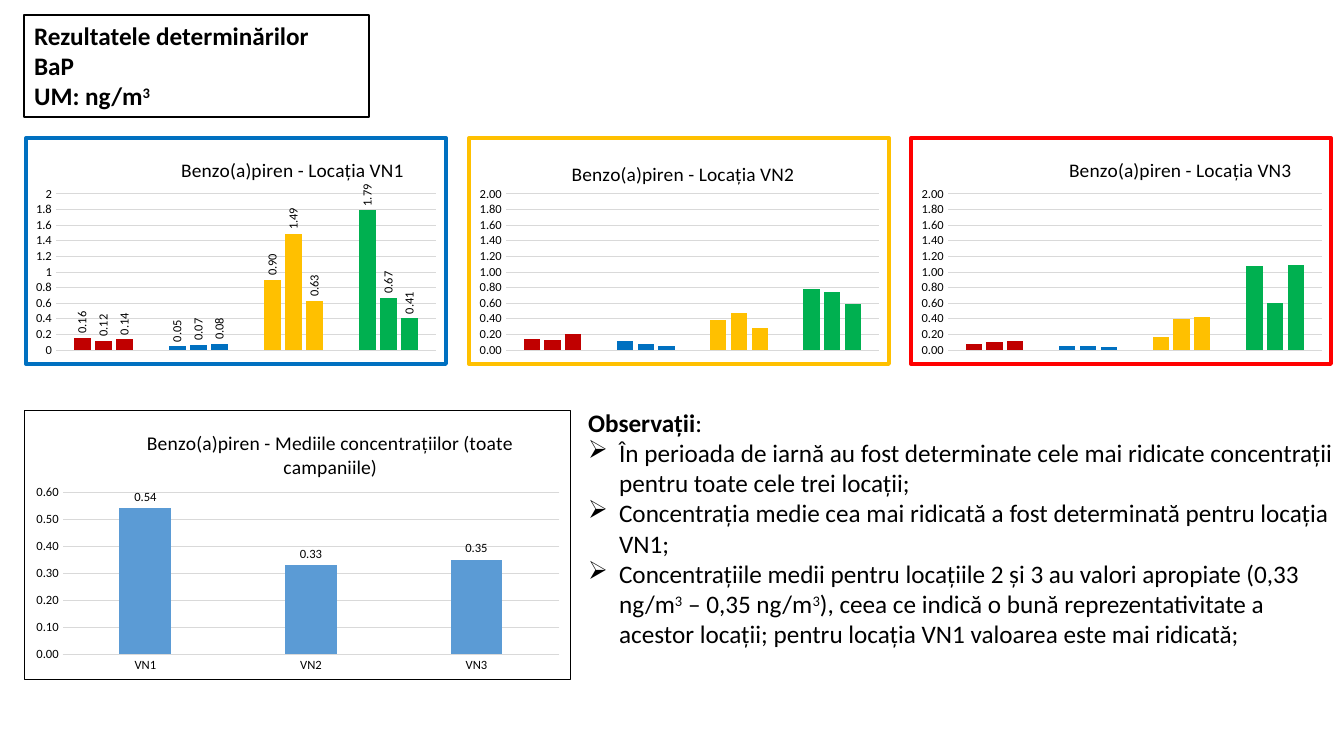
from lxml.etree import SubElement
from pptx import Presentation
from pptx.chart.data import CategoryChartData
from pptx.dml.color import RGBColor
from pptx.enum.chart import XL_CHART_TYPE, XL_LABEL_POSITION, XL_TICK_MARK
from pptx.enum.text import MSO_ANCHOR, MSO_AUTO_SIZE, PP_ALIGN
from pptx.oxml import parse_xml
from pptx.oxml.ns import nsdecls, qn
from pptx.util import Pt

PX = 914400 / 100.8
BLACK = RGBColor(0x00, 0x00, 0x00)
WHITE = RGBColor(0xFF, 0xFF, 0xFF)
GRID = RGBColor(0xD9, 0xD9, 0xD9)
DARK_RED = RGBColor(0xC0, 0x00, 0x00)
RED = RGBColor(0xFF, 0x00, 0x00)
BLUE = RGBColor(0x00, 0x70, 0xC0)
YELLOW = RGBColor(0xFF, 0xC0, 0x00)
GREEN = RGBColor(0x00, 0xB0, 0x50)
LIGHT_BLUE = RGBColor(0x5B, 0x9B, 0xD5)
CAMPAIGN_COLORS = [DARK_RED, BLUE, YELLOW, GREEN]
FONT = "Calibri"


def set_layout(parent, index, fractions, target=""):
    """Place a chart part by hand; fractions are x, y and optionally w, h."""
    for layout in parent.findall(qn("c:layout")):
        parent.remove(layout)
    layout = parse_xml(f"<c:layout {nsdecls('c')}><c:manualLayout/></c:layout>")
    if target:
        SubElement(layout[0], qn("c:layoutTarget")).set("val", target)
    for name in "xy":
        SubElement(layout[0], qn(f"c:{name}Mode")).set("val", "edge")
    for name, value in zip("xywh", fractions):
        SubElement(layout[0], qn(f"c:{name}")).set("val", f"{value:.4f}")
    parent.insert(index, layout)


def set_font(font, size):
    font.name, font.size, font.bold = FONT, Pt(size), False
    font.color.rgb = BLACK


presentation = Presentation()
presentation.slide_width = round(1344 * PX)
presentation.slide_height = round(756 * PX)
slide = presentation.slides.add_slide(presentation.slide_layouts[1])

# Heading and observations: paragraphs of (text, bold, superscript) runs
heading = [
    [("Rezultatele determinărilor", True, False)],
    [("BaP", True, False)],
    [("UM: ng/m", True, False), ("3", True, True)],
]
observations = [
    [("Observații", True, False), (":", False, False)],
    [("În perioada de iarnă au fost determinate cele mai ridicate concentrații "
      "pentru toate cele trei locații;", False, False)],
    [("Concentrația medie cea mai ridicată a fost determinată pentru locația VN1;",
      False, False)],
    [("Concentrațiile medii pentru locațiile 2 și 3 au valori apropiate (0,33 ng/m",
      False, False),
     ("3", False, True), (" – 0,35 ng/m", False, False), ("3", False, True),
     ("), ceea ce indică o bună reprezentativitate a acestor locații; "
      "pentru locația VN1 valoarea este mai ridicată;", False, False)],
]
title, body = slide.shapes.title, slide.placeholders[1]
for shape, frame, paragraphs in [
    (title, (24, 15, 345, 102), heading),
    (body, (578, 402, 766, 254), observations),
]:
    shape.left, shape.top, shape.width, shape.height = [round(v * PX) for v in frame]
    text_frame = shape.text_frame
    text_frame.word_wrap = True
    text_frame.auto_size = MSO_AUTO_SIZE.NONE
    text_frame.vertical_anchor = MSO_ANCHOR.TOP
    for number, runs in enumerate(paragraphs):
        paragraph = text_frame.add_paragraph() if number else text_frame.paragraphs[0]
        paragraph.alignment = PP_ALIGN.LEFT
        paragraph.space_before = Pt(0)
        properties = paragraph._p.get_or_add_pPr()
        bulleted = shape is body and number > 0
        indent = round(31 * PX) if bulleted else 0
        properties.set("marL", str(indent))
        properties.set("indent", str(-indent))
        if bulleted:
            SubElement(properties, qn("a:buFont")).set("typeface", "Wingdings")
            SubElement(properties, qn("a:buChar")).set("char", "Ø")
        else:
            SubElement(properties, qn("a:buNone"))
        set_font(paragraph.font, 18)
        for text, bold, superscript in runs:
            run = paragraph.add_run()
            run.text = text
            run.font.bold = bold
            if superscript:
                run.font._element.set("baseline", "30000")
title.fill.solid()
title.fill.fore_color.rgb = WHITE
title.line.color.rgb = BLACK
title.line.width = Pt(1)

# Frames, plot areas and title corners are in px on the slide
charts = [
    dict(title="Benzo(a)piren - Locația VN1", frame=(24, 136, 424, 230),
         plot=(54, 193, 384, 159), corner=(177, 151), border=BLUE,
         values=[(0.16, 0.05, 0.90, 1.79), (0.12, 0.07, 1.49, 0.67),
                 (0.14, 0.08, 0.63, 0.41)], axis="General", labels="#,##0.00"),
    dict(title="Benzo(a)piren - Locația VN2", frame=(467, 136, 424, 230),
         plot=(504, 193, 377, 159), corner=(567, 155), border=YELLOW,
         values=[(0.14, 0.11, 0.38, 0.78), (0.13, 0.08, 0.48, 0.75),
                 (0.20, 0.05, 0.28, 0.59)], axis="0.00", labels=None),
    dict(title="Benzo(a)piren - Locația VN3", frame=(909, 136, 424, 230),
         plot=(946, 193, 378, 159), corner=(1065, 151), border=RED,
         values=[(0.08, 0.05, 0.17, 1.08), (0.10, 0.05, 0.40, 0.60),
                 (0.11, 0.04, 0.42, 1.09)], axis="0.00", labels=None),
    dict(title="Benzo(a)piren - Mediile concentrațiilor (toate campaniile)",
         frame=(24, 410, 547, 270), plot=(62, 492, 498, 163), corner=(143, 425),
         border=BLACK, values=[(0.54, 0.33, 0.35)], axis="0.00", labels="0.00"),
]
for settings in charts:
    by_campaign = len(settings["values"]) > 1
    data = CategoryChartData()
    data.categories = ["1", "2", "3", "4"] if by_campaign else ["VN1", "VN2", "VN3"]
    for number, values in enumerate(settings["values"], 1):
        data.add_series(f"Series {number}", values)
    left, top, width, height = settings["frame"]
    chart = slide.shapes.add_chart(
        XL_CHART_TYPE.COLUMN_CLUSTERED, *[round(v * PX) for v in settings["frame"]], data
    ).chart
    set_font(chart.font, 10)
    chart.has_legend = False

    chart_title = chart.chart_title
    chart_title.text_frame.text = settings["title"]
    set_font(chart_title.text_frame.paragraphs[0].font, 14)
    x, y = settings["corner"]
    set_layout(chart_title._element, 1, ((x - left) / width, (y - top) / height))
    x, y, w, h = settings["plot"]
    set_layout(chart._chartSpace.chart.plotArea, 0,
               ((x - left) / width, (y - top) / height, w / width, h / height), "inner")
    border_width = Pt(3 if by_campaign else 1)
    chart._chartSpace.find(qn("c:txPr")).addprevious(parse_xml(
        f"<c:spPr {nsdecls('c', 'a')}>"
        f'<a:solidFill><a:srgbClr val="{WHITE}"/></a:solidFill>'
        f'<a:ln w="{border_width}"><a:solidFill><a:srgbClr val="{settings["border"]}"/>'
        "</a:solidFill></a:ln></c:spPr>"))

    value_axis, category_axis = chart.value_axis, chart.category_axis
    for axis in (value_axis, category_axis):
        axis.major_tick_mark = axis.minor_tick_mark = XL_TICK_MARK.NONE
        set_font(axis.tick_labels.font, 9)
    value_axis.minimum_scale = 0
    value_axis.maximum_scale = 2 if by_campaign else 0.6
    value_axis.major_unit = 0.2 if by_campaign else 0.1
    value_axis.tick_labels.number_format = settings["axis"]
    value_axis.tick_labels.number_format_is_linked = False
    value_axis.format.line.fill.background()
    category_axis.visible = not by_campaign
    for line in (value_axis.major_gridlines.format.line, category_axis.format.line):
        line.color.rgb = GRID
        line.width = Pt(0.75)

    plot = chart.plots[0]
    plot.vary_by_categories = False
    plot.gap_width, plot.overlap = 219, -27
    for series in plot.series:
        series.format.fill.solid()
        series.format.fill.fore_color.rgb = LIGHT_BLUE
        if by_campaign:
            for number, color in enumerate(CAMPAIGN_COLORS):
                fill = series.points[number].format.fill
                fill.solid()
                fill.fore_color.rgb = color
        if settings["labels"]:
            labels = series.data_labels
            labels.show_value = True
            labels.number_format = settings["labels"]
            labels.number_format_is_linked = False
            labels.position = XL_LABEL_POSITION.OUTSIDE_END
            set_font(labels.font, 9)
            if by_campaign:
                text_body = labels._element.find(qn("c:txPr")).find(qn("a:bodyPr"))
                text_body.set("rot", "-5400000")
                text_body.set("vert", "horz")

presentation.save("out.pptx")
